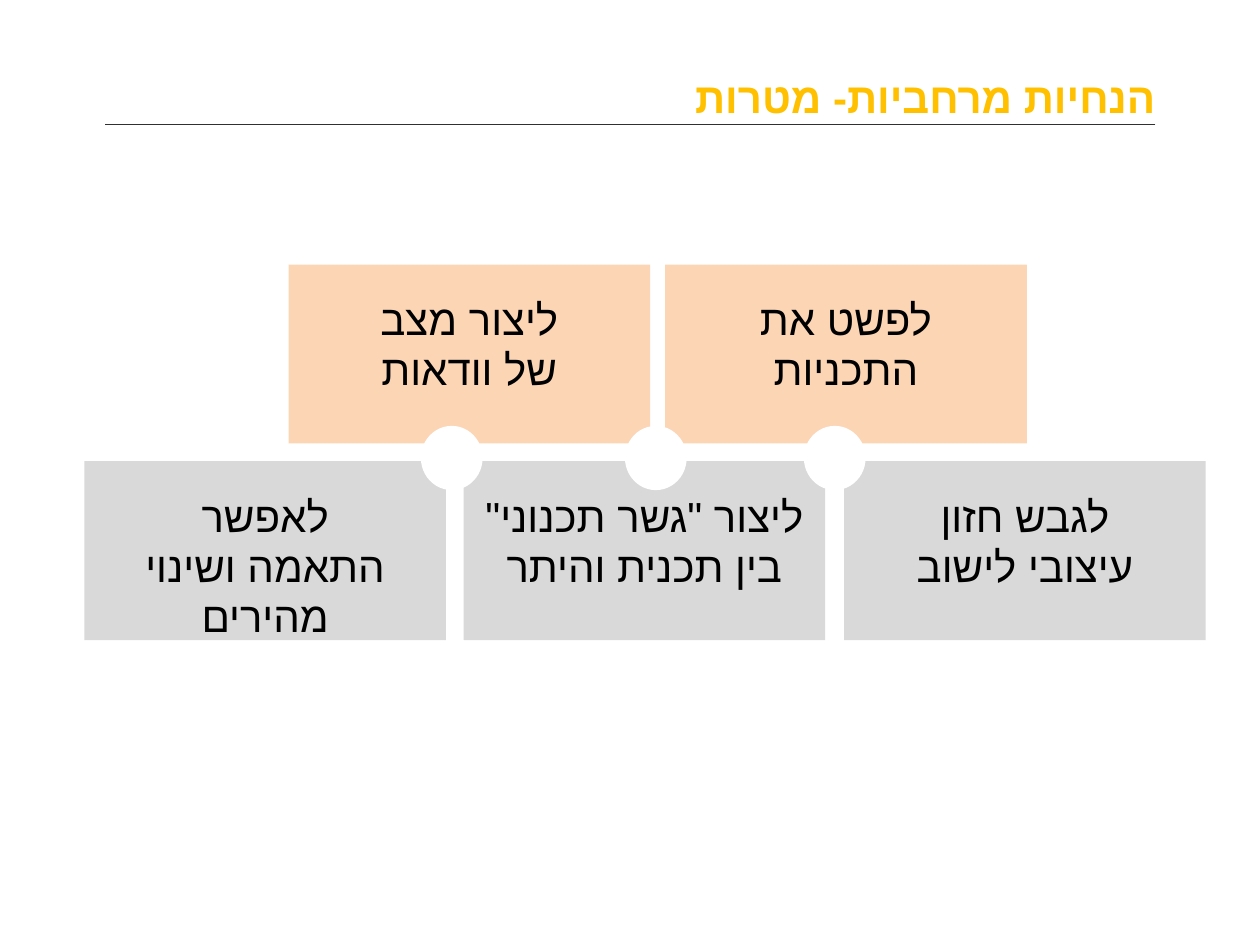
"""Build the slide of spatial guideline goals with its five linked boxes."""
from dataclasses import dataclass

from lxml import etree
from pptx import Presentation
from pptx.dml.color import RGBColor as Rgb
from pptx.enum import shapes, text
from pptx.oxml import ns
from pptx.util import Inches, Pt


@dataclass
class Theme:
    face: str = "Arial"
    size: int = 24
    gold: str = "FFC000"
    ink: str = "000000"
    rule: str = "303030"
    peach: str = "FCD5B5"
    gray: str = "D9D9D9"
    white: str = "FFFFFF"


look = Theme()


def style(frame, align, color, bold=False):
    for para in frame.paragraphs:
        para.alignment = align
        for run in para.runs:
            run.font.name = look.face
            run.font.size = Pt(look.size)
            run.font.bold = bold
            run.font.color.rgb = Rgb.from_string(color)
            props = run.font._element
            etree.SubElement(props, ns.qn("a:cs"), typeface=look.face)


def block(kind, left, top, width, height, color):
    shape = slide.shapes.add_shape(
        kind, Inches(left), Inches(top), Inches(width), Inches(height))
    shape.shadow.inherit = False
    shape.fill.solid()
    shape.fill.fore_color.rgb = Rgb.from_string(color)
    shape.line.fill.background()


deck = Presentation()
deck.slide_width, deck.slide_height = Inches(10), Inches(7.5)
slide = deck.slides.add_slide(deck.slide_layouts[5])

rule = slide.shapes.add_connector(
    shapes.MSO_CONNECTOR.STRAIGHT,
    Inches(9.17), Inches(0.99), Inches(0.83), Inches(0.99))
rule.line.color.rgb = Rgb.from_string(look.rule)
rule.line.width = Pt(0.75)
etree.SubElement(rule._element.spPr, ns.qn("a:effectLst"))

title = slide.shapes.title
title.left, title.top = Inches(0.35), Inches(0.14)
title.width, title.height = Inches(8.92), Inches(1.25)
title.text_frame.text = "הנחיות מרחביות- מטרות"
title.text_frame.vertical_anchor = text.MSO_ANCHOR.MIDDLE
title.text_frame.paragraphs[0]._p.get_or_add_pPr().set("rtl", "1")
style(title.text_frame, text.PP_ALIGN.RIGHT, look.gold, True)

wide, high = 2.87, 1.42
goals = [
    (5.28, 2.1, 2.36, look.peach, "לפשט את התכניות"),
    (2.29, 2.1, 2.36, look.peach, "ליצור מצב\nשל וודאות"),
    (3.68, 3.66, 2.86, look.gray, "ליצור \"גשר תכנוני\" בין תכנית והיתר"),
    (0.67, 3.66, 2.36, look.gray, "לאפשר התאמה ושינוי מהירים"),
    (6.7, 3.66, 2.36, look.gray, "לגבש חזון\nעיצובי לישוב"),
]
for left, top, span, color, words in goals:
    block(shapes.MSO_SHAPE.RECTANGLE, left, top, wide, high, color)
    label = slide.shapes.add_textbox(
        Inches(left + (wide - span) / 2), Inches(top + 0.18),
        Inches(span), Inches(0.98))
    label.text_frame.word_wrap = True
    label.text_frame.auto_size = text.MSO_AUTO_SIZE.SHAPE_TO_FIT_TEXT
    label.text_frame.text = words
    style(label.text_frame, text.PP_ALIGN.CENTER, look.ink)

for left in (6.38, 4.96, 3.34):
    block(shapes.MSO_SHAPE.OVAL, left, 3.38, 0.49, 0.51, look.white)

deck.save("out.pptx")
